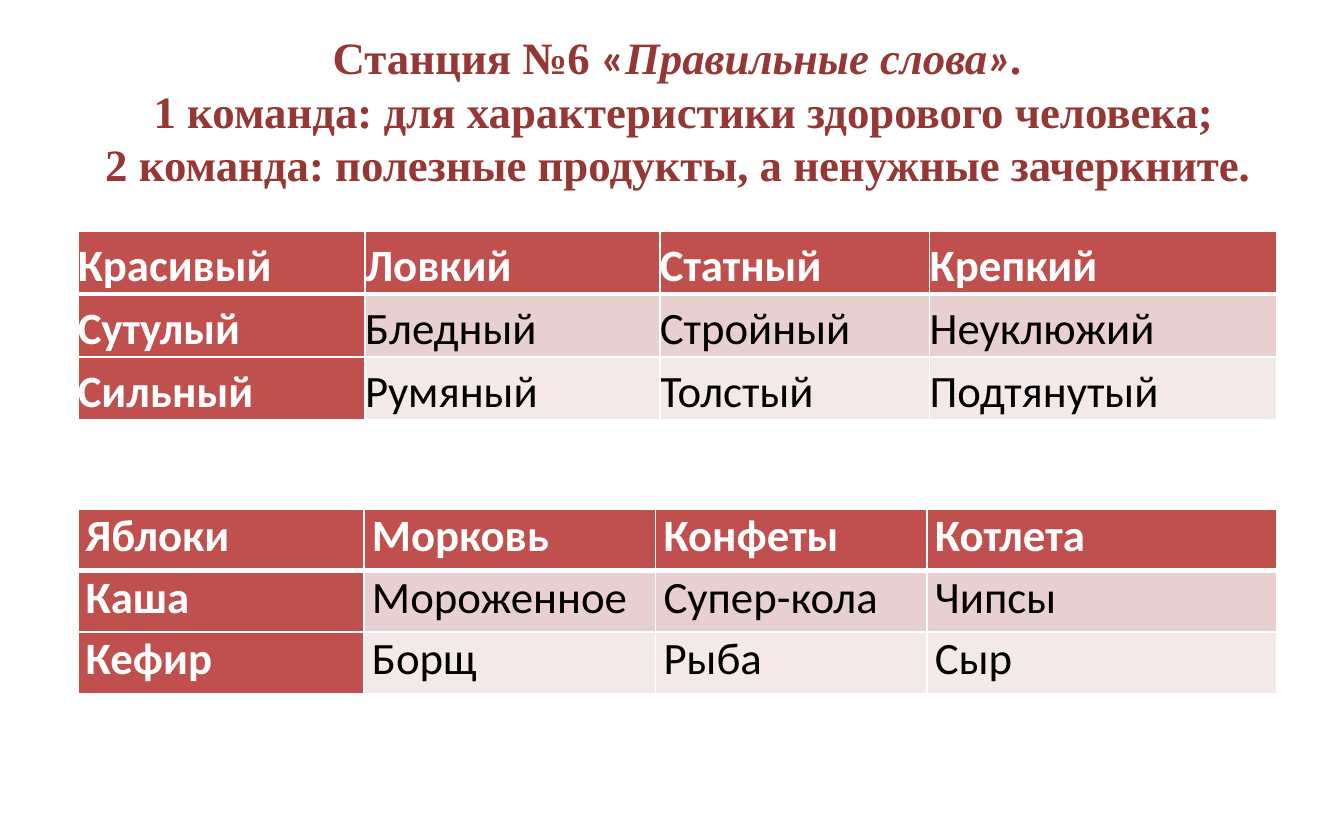
from lxml import etree
from pptx import Presentation
from pptx.dml.color import RGBColor
from pptx.enum.text import MSO_ANCHOR, MSO_AUTO_SIZE, PP_ALIGN
from pptx.oxml.ns import qn
from pptx.util import Cm, Pt

COLORS = {
    "title": "953735",
    "head": "C0504D",
    "band1": "E8D0D0",
    "band2": "F4E9E9",
    "white": "FFFFFF",
    "black": "000000",
}


def add_run(p, text, font, color, bold=True, italic=False):
    r = p.add_run()
    r.text = text
    r.font.name = font
    r.font.size = Pt(24)
    r.font.bold = bold
    r.font.italic = italic
    r.font.color.rgb = RGBColor.from_string(COLORS[color])


def set_borders(cell, widths):
    tc_pr = cell._tc.get_or_add_tcPr()
    for i, (side, width) in enumerate(widths.items()):
        ln = etree.Element(qn(f"a:ln{side}"), w=str(Pt(width)))
        fill = etree.SubElement(ln, qn("a:solidFill"))
        etree.SubElement(fill, qn("a:srgbClr"), val=COLORS["white"])
        tc_pr.insert(i, ln)


prs = Presentation()
prs.slide_width, prs.slide_height = Cm(25.4), Cm(15.88)
s = prs.slides.add_slide(prs.slide_layouts[5])

title = s.shapes.title
title.left, title.top = Cm(1.27), Cm(0.38)
title.width, title.height = Cm(23.29), Cm(4.11)
tf = title.text_frame
tf.word_wrap = True
tf.auto_size = MSO_AUTO_SIZE.NONE
tf.vertical_anchor = MSO_ANCHOR.TOP
tf.margin_top = Cm(0.18)

title_lines = [
    [
        ("Станция №6 ", "Times New Roman", False),
        ("«", "Calibri", False),
        ("Правильные слова", "Times New Roman", True),
        ("»", "Calibri", True),
        (". ", "Times New Roman", True),
    ],
    [(" 1 команда: для характеристики здорового человека; ", "Times New Roman", False)],
    [("2 команда: полезные продукты, а ненужные зачеркните. ", "Times New Roman", False)],
]
for i, line in enumerate(title_lines):
    p = tf.paragraphs[0] if i == 0 else tf.add_paragraph()
    p.alignment = PP_ALIGN.CENTER
    for text, font, italic in line:
        add_run(p, text, font, "title", italic=italic)

tables = [
    {
        "top": 4.37, "cols": [5.43, 5.57, 5.1, 6.56], "margin": 0, "spacing": 1.15,
        "rows": [
            ["Красивый", "Ловкий", "Статный", "Крепкий"],
            ["Сутулый", "Бледный", "Стройный", "Неуклюжий"],
            ["Сильный", "Румяный", "Толстый", "Подтянутый"],
        ],
    },
    {
        "top": 9.63, "cols": [5.41, 5.51, 5.13, 6.61], "margin": 0.15, "spacing": 1.0,
        "rows": [
            ["Яблоки", "Морковь", "Конфеты", "Котлета"],
            ["Каша", "Мороженное", "Супер-кола", "Чипсы"],
            ["Кефир", "Борщ", "Рыба", "Сыр"],
        ],
    },
]
row_height = 1.16
for spec_table in tables:
    rows, cols = spec_table["rows"], spec_table["cols"]
    table = s.shapes.add_table(
        len(rows), len(cols), Cm(1.47), Cm(spec_table["top"]),
        Cm(sum(cols)), Cm(row_height * len(rows)),
    ).table
    table.first_col = True
    for col, width in zip(table.columns, cols):
        col.width = Cm(width)
    for i, words in enumerate(rows):
        table.rows[i].height = Cm(row_height)
        for j, word in enumerate(words):
            is_head = i == 0 or j == 0
            cell = table.cell(i, j)
            cell.margin_left = cell.margin_right = Cm(spec_table["margin"])
            cell.margin_top = cell.margin_bottom = 0
            cell.fill.solid()
            fill = "head" if is_head else f"band{i}"
            cell.fill.fore_color.rgb = RGBColor.from_string(COLORS[fill])
            set_borders(cell, {
                "L": 1, "R": 1,
                "T": 3 if i == 1 else 1,
                "B": 3 if i == 0 else 1,
            })
            p = cell.text_frame.paragraphs[0]
            p.alignment = PP_ALIGN.JUSTIFY
            p.line_spacing = spec_table["spacing"]
            add_run(p, word, "Calibri", "white" if is_head else "black", bold=is_head)

prs.save("out.pptx")
